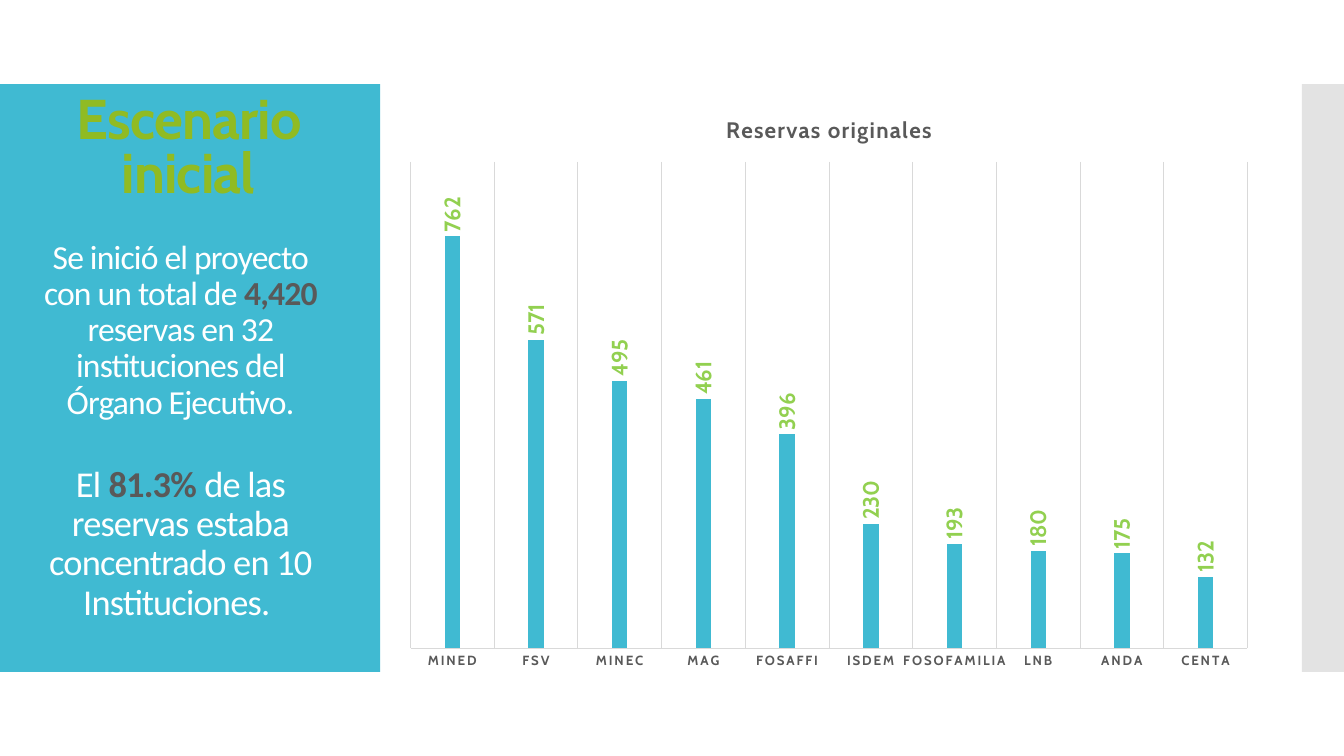
from lxml.etree import SubElement
from pptx import Presentation
from pptx.chart.data import CategoryChartData
from pptx.dml.color import RGBColor
from pptx.enum.chart import XL_CHART_TYPE, XL_LABEL_POSITION, XL_TICK_MARK
from pptx.enum.shapes import MSO_SHAPE
from pptx.enum.text import MSO_ANCHOR, PP_ALIGN
from pptx.oxml.ns import qn
from pptx.util import Inches, Pt

TURQUOISE = RGBColor(0x40, 0xBA, 0xD2)
SILVER = RGBColor(0xC8, 0xC8, 0xC8)
OLIVE = RGBColor(0x90, 0xBB, 0x23)
LIME = RGBColor(0x92, 0xD0, 0x50)
GRAPHITE = RGBColor(0x59, 0x59, 0x59)
PALE_GREY = RGBColor(0xD9, 0xD9, 0xD9)
WHITE = RGBColor(0xFF, 0xFF, 0xFF)

COLUMNS, ROWS = 32, 18
RESERVES = {
    "MINED": 762, "FSV": 571, "MINEC": 495, "MAG": 461, "FOSAFFI": 396,
    "ISDEM": 230, "FOSOFAMILIA": 193, "LNB": 180, "ANDA": 175, "CENTA": 132,
}


class SlideBuilder:
    """Holds the style and the current slide; places are grid columns and rows."""

    heading_font, body_font = "Cabin", "Calibri"

    def __init__(self, deck):
        self.page = deck.slides.add_slide(deck.slide_layouts[6])
        self.column = deck.slide_width / COLUMNS
        self.row = deck.slide_height / ROWS

    def place(self, left, top, width, height):
        return (round(left * self.column), round(top * self.row),
                round(width * self.column), round(height * self.row))

    def style(self, font, name, size, color, bold=True):
        font.name, font.size, font.bold = name, Pt(size), bold
        font.color.rgb = color

    def panel(self, area, color, opacity=100):
        shape = self.page.shapes.add_shape(MSO_SHAPE.RECTANGLE, *self.place(*area))
        shape.shadow.inherit = False
        shape.fill.solid()
        shape.fill.fore_color.rgb = color
        shape.line.fill.background()
        if opacity < 100:
            tint = shape.element.xpath("./p:spPr/a:solidFill/a:srgbClr")[0]
            SubElement(tint, qn("a:alpha")).set("val", str(opacity * 1000))

    def text(self, area, runs, font_name, size, line_spacing):
        box = self.page.shapes.add_textbox(*self.place(*area))
        frame = box.text_frame
        frame.word_wrap = True
        frame.vertical_anchor = MSO_ANCHOR.MIDDLE
        para = frame.paragraphs[0]
        para.alignment = PP_ALIGN.CENTER
        para.line_spacing = line_spacing
        for words, color, bold in runs:
            span = para.add_run()
            span.text = words
            self.style(span.font, font_name, size, color, bold)
        for properties in box.element.xpath(".//a:rPr"):
            properties.set("spc", "-60")

    def column_chart(self, area, title, values, maximum):
        data = CategoryChartData()
        data.categories = list(values)
        data.add_series(title, list(values.values()))
        chart = self.page.shapes.add_chart(
            XL_CHART_TYPE.COLUMN_CLUSTERED, *self.place(*area), data).chart
        chart.has_legend = False
        chart.font.name, chart.font.size = self.heading_font, Pt(10)

        # Title
        chart.has_title = True
        chart.chart_title.include_in_layout = False
        span = chart.chart_title.text_frame.paragraphs[0].add_run()
        span.text = title
        self.style(span.font, self.heading_font, 16, GRAPHITE)

        # Axes
        value_axis, category_axis = chart.value_axis, chart.category_axis
        value_axis.minimum_scale, value_axis.maximum_scale = 0, maximum
        value_axis.has_major_gridlines = False
        value_axis.visible = False
        category_axis.has_major_gridlines = True
        category_axis.major_tick_mark = XL_TICK_MARK.NONE
        for line in (category_axis.format.line, category_axis.major_gridlines.format.line):
            line.color.rgb = PALE_GREY
            line.width = Pt(0.75)
        self.style(category_axis.tick_labels.font, self.heading_font, 9.5, GRAPHITE)

        # Columns and their upright labels
        plot = chart.plots[0]
        plot.vary_by_categories = False
        plot.gap_width, plot.overlap = 444, -90
        series = plot.series[0]
        series.format.fill.solid()
        series.format.fill.fore_color.rgb = TURQUOISE
        labels = series.data_labels
        labels.show_value = True
        labels.position = XL_LABEL_POSITION.OUTSIDE_END
        self.style(labels.font, self.heading_font, 16, LIME)
        upright = chart.element.xpath(".//c:ser/c:dLbls/c:txPr/a:bodyPr")[0]
        upright.set("rot", "-5400000")
        upright.set("vert", "horz")

        # Letter spacing
        for path, spacing in ((".//c:title//a:rPr", "100"),
                              (".//c:catAx/c:txPr//a:defRPr", "120")):
            chart.element.xpath(path)[0].set("spc", spacing)

        # Plot area as shares of the chart
        plot_area = chart.element.xpath(".//c:plotArea")[0]
        for old_layout in plot_area.findall(qn("c:layout")):
            plot_area.remove(old_layout)
        layout = SubElement(plot_area, qn("c:layout"))
        plot_area.insert(0, layout)
        manual = SubElement(layout, qn("c:manualLayout"))
        for tag, value in (("layoutTarget", "inner"), ("xMode", "edge"), ("yMode", "edge"),
                           ("x", "0.02"), ("y", "0.116"), ("w", "0.96"), ("h", "0.827")):
            SubElement(manual, qn("c:" + tag)).set("val", value)


def main():
    deck = Presentation()
    deck.slide_width, deck.slide_height = Inches(13.333), Inches(7.5)
    slide = SlideBuilder(deck)

    # Side panels
    slide.panel((0, 2, 9.05, 14), TURQUOISE)
    slide.panel((31, 2, 1, 14), SILVER, opacity=50)

    # Heading and key figures
    slide.text((0, 2.23, 8.98, 2.69), [("Escenario inicial", OLIVE, True)],
               slide.heading_font, 40, 0.8)
    messages = (
        (6.53, 24, "Se inició el proyecto con un total de ", "4,420 ",
         "reservas en 32 instituciones del Órgano Ejecutivo."),
        (11.62, 26, "El ", "81.3% ",
         "de las reservas estaba concentrado en 10 Instituciones. "),
    )
    for top, size, opening, figure, closing in messages:
        runs = [(opening, WHITE, False), (figure, GRAPHITE, True), (closing, WHITE, False)]
        slide.text((0.43, top, 7.73, 2.69), runs, slide.body_font, size, 0.9)

    # Reserves by institution
    slide.column_chart((9.36, 2.23, 20.76, 14), "Reservas originales", RESERVES, 900)

    deck.save("out.pptx")


if __name__ == "__main__":
    main()
